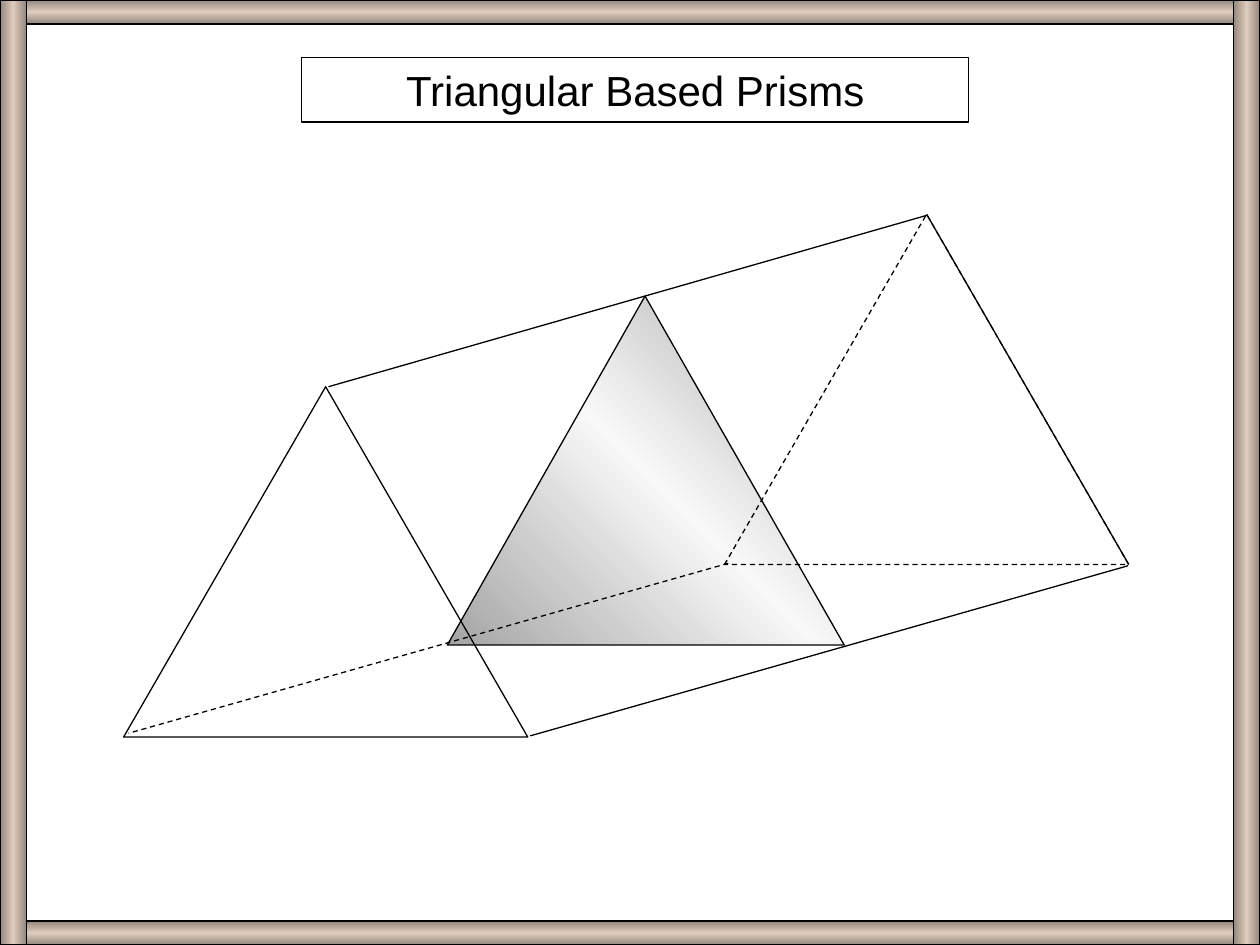
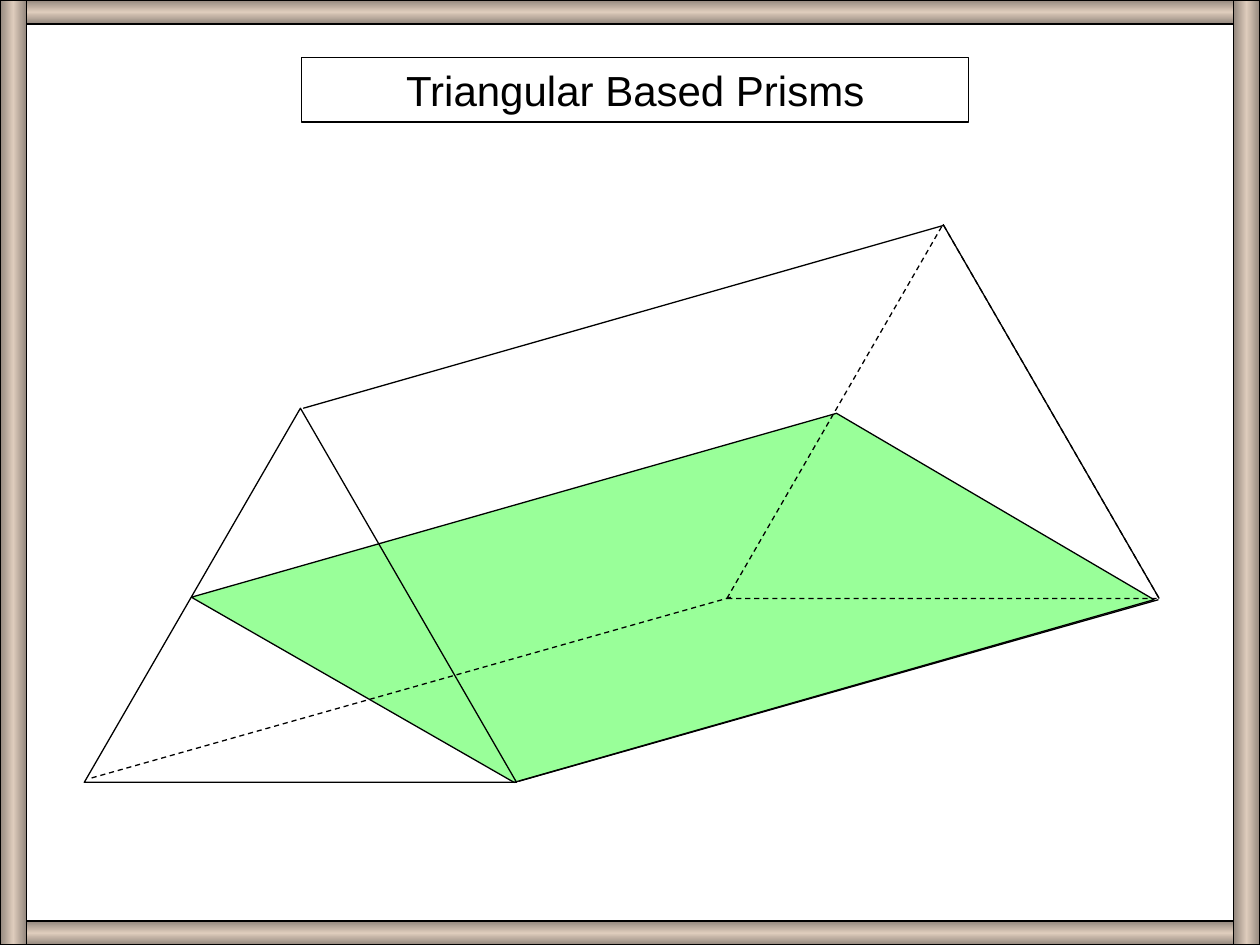
"""Build two slides showing plane sections through a triangular prism."""
from copy import deepcopy

from lxml.etree import SubElement
from pptx import Presentation
from pptx.dml.color import RGBColor
from pptx.enum.dml import MSO_LINE
from pptx.enum.shapes import MSO_CONNECTOR, MSO_SHAPE
from pptx.enum.text import MSO_ANCHOR, PP_ALIGN
from pptx.oxml.ns import qn
from pptx.util import Pt

TITLE = "Triangular Based Prisms"
COLOURS = {
    "ink": "000000",
    "frame edge": "93877D",
    "frame middle": "DECCBC",
    "section edge": "A4A4A4",
    "section middle": "F8F8F8",
    "green": "99FF99",
}
PRISMS = [
    {
        "front": (70.6, 221), "back": (414, 122.4), "size": (231, 200.2),
        "section": [(255.6, 368.6), (368.6, 169.2), (482.4, 368.6)],
        "fill": ("section edge", "section middle", 45),
    },
    {
        "front": (48.2, 233.3), "back": (415.4, 128.2), "size": (247, 213.8),
        "section": [(109.4, 341.3), (478.1, 236.2), (659.5, 342.7), (293.8, 447.1)],
        "fill": "green",
    },
]
LONG_EDGES = [
    ("right", (1.4, -0.7), (-0.4, 0.7), False),
    ("apex", (1.6, 0), (0, 0.7), False),
    ("left", (2.9, -2.2), (2.2, -0.7), True),
]
WIDTH, HEIGHT = 720, 540
BAR_HEIGHT, BAR_WIDTH = 13.7, 15.1
FRAME = [
    (0, 0, WIDTH, BAR_HEIGHT, 270),
    (0, HEIGHT - BAR_HEIGHT, WIDTH, BAR_HEIGHT, 270),
    (0, 0, BAR_WIDTH, HEIGHT, 0),
    (WIDTH - BAR_WIDTH, 0, BAR_WIDTH, HEIGHT, 0),
]


def colour(name):
    return RGBColor.from_string(COLOURS[name])


def set_line(line, dashed=False):
    line.color.rgb = colour("ink")
    line.width = Pt(0.75)
    if dashed:
        line.dash_style = MSO_LINE.DASH


def set_fill(fill, paint):
    if paint is None:
        fill.background()
    elif isinstance(paint, str):
        fill.solid()
        fill.fore_color.rgb = colour(paint)
    else:
        edge, middle, angle = paint
        fill.gradient()
        fill.gradient_angle = angle
        first = fill.gradient_stops[0]._gs
        first.addnext(deepcopy(first))
        for stop, name, position in zip(fill.gradient_stops, (edge, middle, edge), (0, 0.5, 1)):
            stop.color.rgb = colour(name)
            stop.position = position


def style(shape, paint=None, dashed=False):
    shape.shadow.inherit = False
    set_fill(shape.fill, paint)
    set_line(shape.line, dashed)
    return shape


def add_preset(slide, preset, box, paint=None, dashed=False):
    return style(slide.shapes.add_shape(preset, *map(Pt, box)), paint, dashed)


def add_edge(slide, start, end, dashed=False):
    edge = slide.shapes.add_connector(MSO_CONNECTOR.STRAIGHT, *map(Pt, (*start, *end)))
    set_line(edge.line, dashed)
    SubElement(edge._element.spPr, qn("a:effectLst"))


def add_section(slide, corners, paint):
    start, *others = [(Pt(x), Pt(y)) for x, y in corners]
    outline = slide.shapes.build_freeform(*start)
    outline.add_line_segments(others, close=True)
    style(outline.convert_to_shape(), paint)


def triangle_corners(origin, size):
    (x, y), (width, height) = origin, size
    return {"left": (x, y + height), "apex": (x + width / 2, y), "right": (x + width, y + height)}


def shifted(point, nudge):
    return point[0] + nudge[0], point[1] + nudge[1]


def add_prism(slide, prism):
    add_section(slide, prism["section"], prism["fill"])
    for end, dashed in (("front", False), ("back", True)):
        add_preset(slide, MSO_SHAPE.ISOSCELES_TRIANGLE, prism[end] + prism["size"], dashed=dashed)
    front, back = (triangle_corners(prism[end], prism["size"]) for end in ("front", "back"))
    for corner, front_nudge, back_nudge, dashed in LONG_EDGES:
        ends = shifted(back[corner], back_nudge), shifted(front[corner], front_nudge)
        add_edge(slide, *ends, dashed)
    add_edge(slide, back["apex"], back["right"])


def add_title(slide):
    title = add_preset(slide, MSO_SHAPE.RECTANGLE, (172.5, 33, 381, 36.8)).text_frame
    title.vertical_anchor = MSO_ANCHOR.MIDDLE
    title.word_wrap = True
    heading = title.paragraphs[0]
    heading.text = TITLE
    heading.alignment = PP_ALIGN.CENTER
    heading.font.name = "Arial"
    heading.font.size = Pt(24)
    heading.font.color.rgb = colour("ink")


def add_frame(slide):
    for *bar, angle in FRAME:
        add_preset(slide, MSO_SHAPE.RECTANGLE, bar, ("frame edge", "frame middle", angle))


def main():
    deck = Presentation()
    deck.slide_width, deck.slide_height = Pt(WIDTH), Pt(HEIGHT)
    for prism in PRISMS:
        slide = deck.slides.add_slide(deck.slide_layouts[6])
        add_prism(slide, prism)
        add_title(slide)
        add_frame(slide)
    deck.save("out.pptx")


if __name__ == "__main__":
    main()
